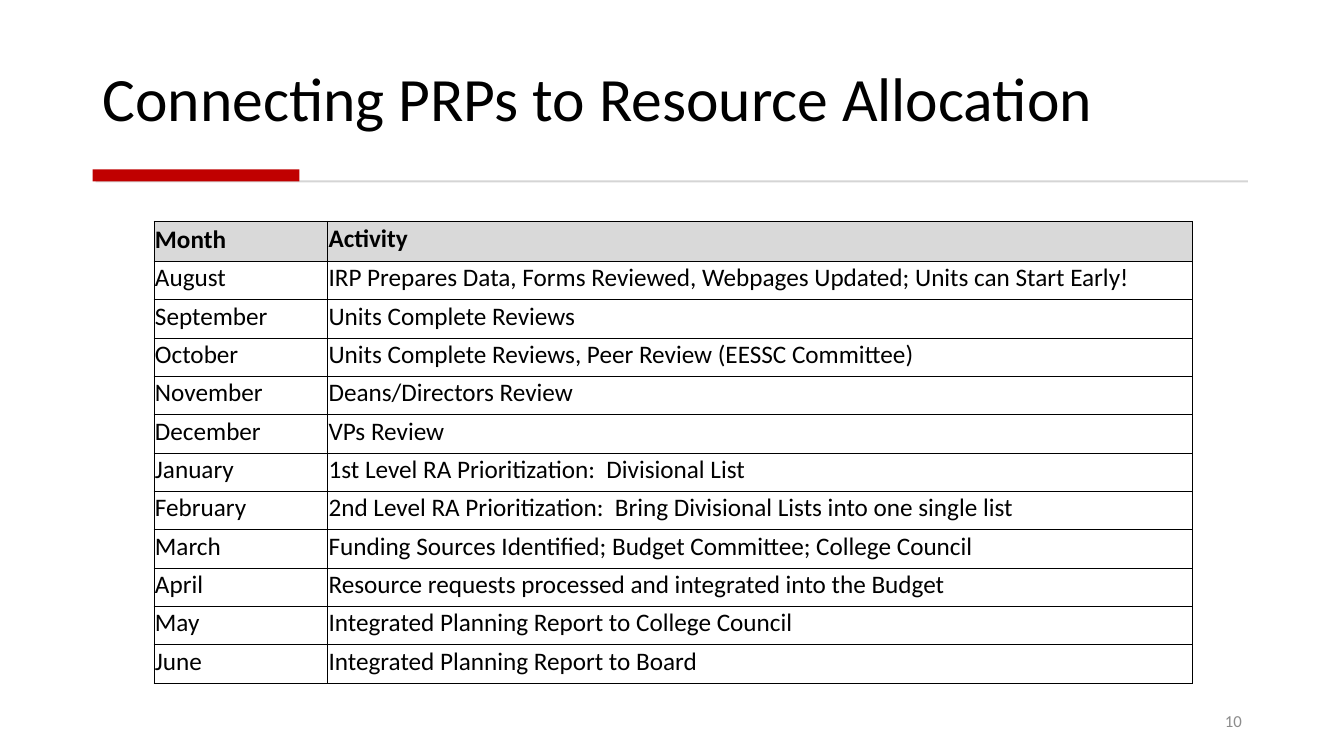
from lxml.etree import SubElement
from pptx import Presentation
from pptx.dml.color import RGBColor
from pptx.enum.shapes import MSO_SHAPE
from pptx.enum.text import MSO_ANCHOR, PP_ALIGN
from pptx.oxml.ns import qn
from pptx.util import Pt


def color(code):
    return RGBColor.from_string(code)


def write(frame, text, size, code="000000", bold=False, align=PP_ALIGN.LEFT, spacing=1.0):
    para = frame.paragraphs[0]
    para.alignment = align
    para.line_spacing = spacing
    span = para.add_run()
    span.text = text
    for name, value in {"name": "Calibri", "size": Pt(size), "bold": bold}.items():
        setattr(span.font, name, value)
    span.font.color.rgb = color(code)


deck = Presentation()
deck.slide_width, deck.slide_height = Pt(960), Pt(540)
page = deck.slides.add_slide(deck.slide_layouts[6])

# Title and page number
labels = [
    ((66.2, 20.2, 827.3, 79.9), MSO_ANCHOR.BOTTOM,
     {"text": "Connecting PRPs to Resource Allocation", "size": 44, "spacing": 0.9}),
    ((678.2, 500.4, 216, 28.8), MSO_ANCHOR.MIDDLE,
     {"text": "10", "size": 12, "code": "8C8C8C", "align": PP_ALIGN.RIGHT}),
]
for place, anchor, content in labels:
    box = page.shapes.add_textbox(*map(Pt, place))
    box.text_frame.word_wrap = True
    box.text_frame.vertical_anchor = anchor
    write(box.text_frame, **content)

# Rule under the title, with its red accent
rules = [
    ((68.4, 128.9, 823, 1.4), "D5D5D5"),
    ((66.2, 121, 147.6, 8.6), "C00000"),
]
for place, code in rules:
    bar = page.shapes.add_shape(MSO_SHAPE.RECTANGLE, *map(Pt, place))
    bar.shadow.inherit = False
    bar.fill.solid()
    bar.fill.fore_color.rgb = color(code)
    bar.line.fill.background()

# Calendar table
calendar = [
    ("Month", "Activity"),
    ("August", "IRP Prepares Data, Forms Reviewed, Webpages Updated; Units can Start Early!"),
    ("September", "Units Complete Reviews"),
    ("October", "Units Complete Reviews, Peer Review (EESSC Committee)"),
    ("November", "Deans/Directors Review"),
    ("December", "VPs Review"),
    ("January", "1st Level RA Prioritization:  Divisional List"),
    ("February", "2nd Level RA Prioritization:  Bring Divisional Lists into one single list"),
    ("March", "Funding Sources Identified; Budget Committee; College Council"),
    ("April", "Resource requests processed and integrated into the Budget"),
    ("May", "Integrated Planning Report to College Council"),
    ("June", "Integrated Planning Report to Board"),
]
table = page.shapes.add_table(len(calendar), 2, Pt(110), Pt(158), Pt(742), Pt(330.2)).table
table.first_row = table.horz_banding = False
for column, width in zip(table.columns, (124, 618)):
    column.width = Pt(width)

cell_format = {
    "margin_left": Pt(0.7), "margin_top": Pt(0.7),
    "margin_right": Pt(0.7), "margin_bottom": Pt(4.3),
    "vertical_anchor": MSO_ANCHOR.BOTTOM,
}
for row, texts in enumerate(calendar):
    header = row == 0
    table.rows[row].height = Pt(28.7 if header else 27.4)
    for cell, text in zip(table.rows[row].cells, texts):
        for name, value in cell_format.items():
            setattr(cell, name, value)
        write(cell.text_frame, text, 18, bold=header)
        # Borders come before the fill in the cell properties
        for side in ("lnL", "lnR", "lnT", "lnB"):
            edge = SubElement(cell._tc.get_or_add_tcPr(), qn(f"a:{side}"), w=str(Pt(0.5)))
            SubElement(SubElement(edge, qn("a:solidFill")), qn("a:srgbClr"), val="000000")
        if header:
            cell.fill.solid()
            cell.fill.fore_color.rgb = color("D9D9D9")
        else:
            cell.fill.background()
table.cell(0, 1).vertical_anchor = MSO_ANCHOR.MIDDLE

deck.save("out.pptx")
